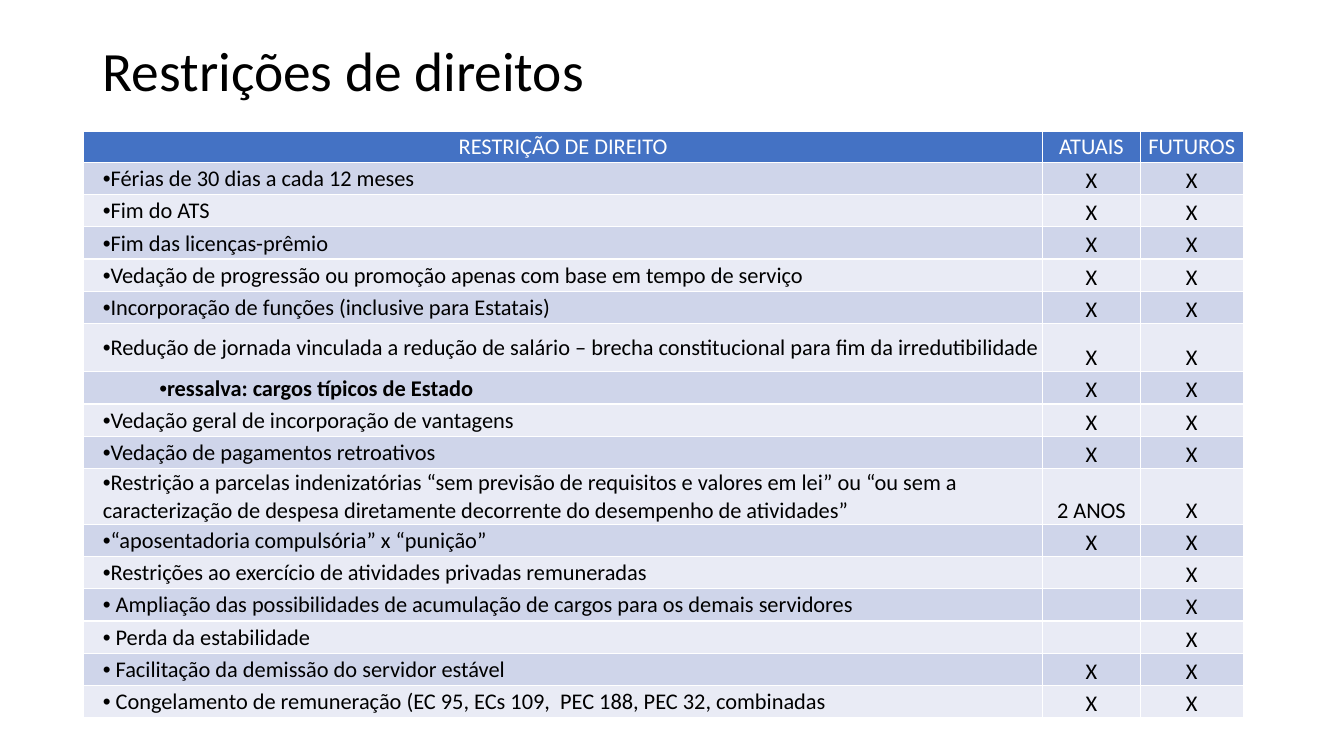
from lxml.etree import SubElement
from pptx import Presentation
from pptx.dml.color import RGBColor
from pptx.enum.text import MSO_ANCHOR, MSO_AUTO_SIZE, PP_ALIGN
from pptx.oxml.ns import qn
from pptx.util import Inches, Pt

WHITE = RGBColor(0xFF, 0xFF, 0xFF)
BLACK = RGBColor(0x00, 0x00, 0x00)
HEADER_BLUE = RGBColor(0x44, 0x72, 0xC4)
BANDS = (RGBColor(0xCF, 0xD5, 0xEA), RGBColor(0xE9, 0xEB, 0xF5))
FONT = "Calibri"
TEXT_SIZE = 16

TABLE_LEFT, TABLE_TOP = 0.83, 1.3
COLUMN_WIDTHS = (9.51, 0.97, 1.02)
HEADER_HEIGHT, ROW_HEIGHT = 0.31, 0.32
TALL_ROWS = {6: 0.48, 10: 0.51}
SUBITEM_ROW = 7
THIN_INSET, ITEM_INSET, SUBITEM_INSET = 0.01, 0.19, 0.75

HEADINGS = ("RESTRIÇÃO DE DIREITO", "ATUAIS", "FUTUROS")
RESTRICTIONS = (
    ("Férias de 30 dias a cada 12 meses", "X", "X"),
    ("Fim do ATS", "X", "X"),
    ("Fim das licenças-prêmio", "X", "X"),
    ("Vedação de progressão ou promoção apenas com base em tempo de serviço", "X", "X"),
    ("Incorporação de funções (inclusive para Estatais)", "X", "X"),
    ("Redução de jornada vinculada a redução de salário – brecha constitucional "
     "para fim da irredutibilidade", "X", "X"),
    ("ressalva: cargos típicos de Estado", "X", "X"),
    ("Vedação geral de incorporação de vantagens", "X", "X"),
    ("Vedação de pagamentos retroativos", "X", "X"),
    ("Restrição a parcelas indenizatórias “sem previsão de requisitos e valores em lei” "
     "ou “ou sem a caracterização de despesa diretamente decorrente do desempenho "
     "de atividades”", "2 ANOS", "X"),
    ("“aposentadoria compulsória” x “punição”", "X", "X"),
    ("Restrições ao exercício de atividades privadas remuneradas", "", "X"),
    (" Ampliação das possibilidades de acumulação de cargos para os demais servidores",
     "", "X"),
    (" Perda da estabilidade", "", "X"),
    (" Facilitação da demissão do servidor estável", "X", "X"),
    (" Congelamento de remuneração (EC 95, ECs 109,  PEC 188, PEC 32, combinadas",
     "X", "X"),
)


def add_span(para, text, size, color, bold=False):
    """Add one formatted run to a paragraph."""
    span = para.add_run()
    span.text = text
    span.font.name = FONT
    span.font.size = Pt(size)
    span.font.bold = bold
    span.font.color.rgb = color


def add_bullet(para):
    """Give a paragraph a black bullet set directly before its text."""
    properties = para._p.get_or_add_pPr()
    properties.set("marL", "0")
    properties.set("indent", "0")
    color = SubElement(properties, qn("a:buClr"))
    SubElement(color, qn("a:srgbClr"), val=str(BLACK))
    SubElement(properties, qn("a:buFont"), typeface="Arial")
    SubElement(properties, qn("a:buChar"), char="•")


def add_borders(cell):
    """Draw thin white lines on the four sides of a cell."""
    properties = cell._tc.get_or_add_tcPr()
    for side in ("lnL", "lnR", "lnT", "lnB"):
        line = SubElement(properties, qn(f"a:{side}"), w=str(Pt(1)))
        fill = SubElement(line, qn("a:solidFill"))
        SubElement(fill, qn("a:srgbClr"), val=str(WHITE))


def format_cell(cell, fill, anchor, inset=THIN_INSET):
    """Set the borders, fill, anchor and insets of a cell."""
    add_borders(cell)
    cell.fill.solid()
    cell.fill.fore_color.rgb = fill
    cell.vertical_anchor = anchor
    cell.margin_left = Inches(inset)
    cell.margin_top = cell.margin_right = Inches(THIN_INSET)
    cell.margin_bottom = 0


def fill_centred(cell, text, color, fill, anchor):
    """Fill a heading or mark cell with centred text."""
    format_cell(cell, fill, anchor)
    if text:
        para = cell.text_frame.paragraphs[0]
        para.alignment = PP_ALIGN.CENTER
        add_span(para, text, TEXT_SIZE, color)


def fill_item(cell, text, fill, subitem):
    """Fill a first-column cell with a bulleted restriction."""
    inset = SUBITEM_INSET if subitem else ITEM_INSET
    format_cell(cell, fill, MSO_ANCHOR.MIDDLE, inset)
    para = cell.text_frame.paragraphs[0]
    add_bullet(para)
    add_span(para, text, TEXT_SIZE, BLACK, bold=subitem)


def set_title(page, text):
    """Place and format the title placeholder."""
    title = page.shapes.title
    title.left, title.top = Inches(0.92), Inches(0.4)
    title.width, title.height = Inches(11.5), Inches(0.65)
    frame = title.text_frame
    frame.word_wrap = True
    frame.auto_size = MSO_AUTO_SIZE.NONE
    frame.vertical_anchor = MSO_ANCHOR.MIDDLE
    para = frame.paragraphs[0]
    para.alignment = PP_ALIGN.LEFT
    para.line_spacing = 0.9
    add_span(para, text, 39.6, BLACK)


def add_restriction_table(page):
    """Add the table of restrictions with its heading row and banded rows."""
    heights = [HEADER_HEIGHT] + [
        TALL_ROWS.get(number, ROW_HEIGHT) for number in range(1, len(RESTRICTIONS) + 1)]
    table = page.shapes.add_table(
        len(heights), len(COLUMN_WIDTHS), Inches(TABLE_LEFT), Inches(TABLE_TOP),
        Inches(sum(COLUMN_WIDTHS)), Inches(sum(heights))).table
    for column, width in zip(table.columns, COLUMN_WIDTHS):
        column.width = Inches(width)
    for row, height in zip(table.rows, heights):
        row.height = Inches(height)
    for column, heading in enumerate(HEADINGS):
        fill_centred(table.cell(0, column), heading, WHITE, HEADER_BLUE, MSO_ANCHOR.MIDDLE)
    for number, (item, *marks) in enumerate(RESTRICTIONS, start=1):
        band = BANDS[(number - 1) % 2]
        fill_item(table.cell(number, 0), item, band, number == SUBITEM_ROW)
        for column, mark in enumerate(marks, start=1):
            fill_centred(table.cell(number, column), mark, BLACK, band, MSO_ANCHOR.BOTTOM)


def main():
    """Build the slide and save the deck."""
    deck = Presentation()
    deck.slide_width, deck.slide_height = Inches(13.33), Inches(7.5)
    page = deck.slides.add_slide(deck.slide_layouts[5])
    set_title(page, "Restrições de direitos")
    add_restriction_table(page)
    deck.save("out.pptx")


if __name__ == "__main__":
    main()
